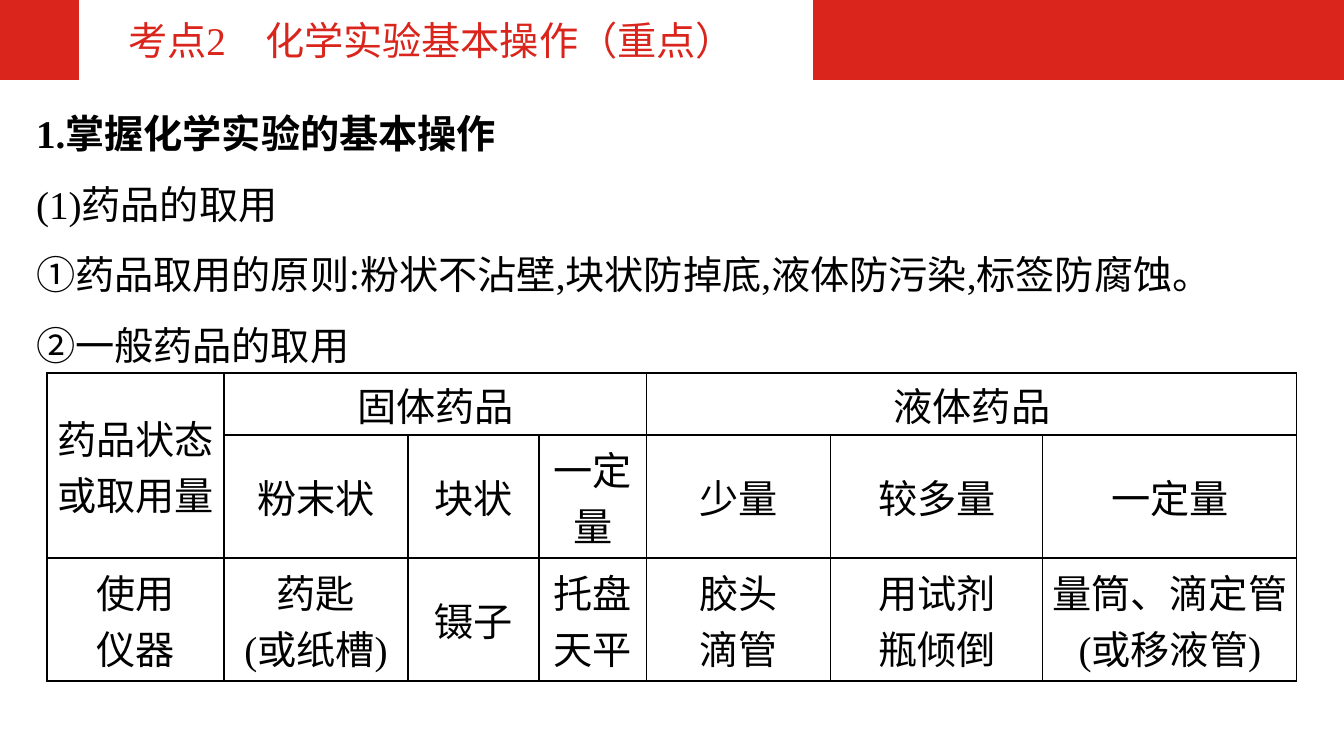
import dataclasses

import lxml.etree
import pptx
import pptx.dml.color
import pptx.enum.shapes
import pptx.enum.text
import pptx.oxml.ns
import pptx.util

EMU_PER_PX = 914400 / 100.8
SLIDE_WIDTH, SLIDE_HEIGHT = 1344, 756


@dataclasses.dataclass(frozen=True)
class Theme:
    """Colours and type shared by the whole slide."""

    red: str = "DA251C"
    white: str = "FFFFFF"
    black: str = "000000"
    font: str = "Times New Roman"
    size: int = 28
    border: int = 1
    line_spacing: float = 1.5


THEME = Theme()

TITLE = "考点2　化学实验基本操作（重点）"
BODY_LINES = [
    "1.掌握化学实验的基本操作",
    "(1)药品的取用",
    "①药品取用的原则:粉状不沾壁,块状防掉底,液体防污染,标签防腐蚀。",
    "②一般药品的取用",
]
COLUMN_WIDTHS = [177, 184, 131, 108, 184, 212, 254]
ROW_HEIGHTS = [62, 123, 123]
TABLE_ROWS = [
    ["药品状态\n或取用量", "固体药品", "", "", "液体药品", "", ""],
    ["", "粉末状", "块状", "一定量", "少量", "较多量", "一定量"],
    ["使用\n仪器", "药匙\n(或纸槽)", "镊子", "托盘\n天平", "胶头\n滴管",
     "用试剂\n瓶倾倒", "量筒、滴定管\n(或移液管)"],
]
MERGES = [((0, 0), (1, 0)), ((0, 1), (0, 3)), ((0, 4), (0, 6))]


def px(length):
    """Turn pixels into EMU."""
    return pptx.util.Emu(round(length * EMU_PER_PX))


def colour(value):
    """Turn a hex string into a colour."""
    return pptx.dml.color.RGBColor.from_string(value)


def place(shape, box):
    """Move a shape to a box of left, top, width and height."""
    shape.left, shape.top, shape.width, shape.height = map(px, box)


def paint(target, value):
    """Give a shape or cell a solid fill."""
    target.fill.solid()
    target.fill.fore_color.rgb = colour(value)


def write(text_frame, lines, alignment, text_colour, spacing=None, bold_lines=0):
    """Write one paragraph per line, the first ones bold."""
    for index, line in enumerate(lines):
        paragraph = text_frame.paragraphs[0] if index == 0 else text_frame.add_paragraph()
        paragraph.alignment = alignment
        paragraph.line_spacing = spacing
        paragraph.space_before = pptx.util.Pt(0)
        run = paragraph.add_run()
        run.text = line
        run.font.name = THEME.font
        run.font.size = pptx.util.Pt(THEME.size)
        run.font.bold = index < bold_lines
        run.font.color.rgb = colour(text_colour)


def add_block(slide, box, value):
    """Add a plain filled rectangle."""
    block = slide.shapes.add_shape(pptx.enum.shapes.MSO_SHAPE.RECTANGLE, *map(px, box))
    block.shadow.inherit = False
    paint(block, value)
    block.line.fill.background()


def build_header(slide, box):
    """Build the red band with its white gap and title panel."""
    left, top, width, height = box
    add_block(slide, box, THEME.red)
    add_block(slide, (left + 79, top, 39, height), THEME.white)
    title = slide.shapes.title
    place(title, (left + 118, top, 695, height))
    paint(title, THEME.white)
    title.text_frame.auto_size = pptx.enum.text.MSO_AUTO_SIZE.NONE
    title.text_frame.vertical_anchor = pptx.enum.text.MSO_ANCHOR.MIDDLE
    write(title.text_frame, [TITLE], pptx.enum.text.PP_ALIGN.LEFT, THEME.red)
    title.element.getparent().append(title.element)


def build_body(slide, box):
    """Build the list of points without bullets."""
    body = slide.placeholders[1]
    place(body, box)
    body.text_frame.auto_size = pptx.enum.text.MSO_AUTO_SIZE.NONE
    write(body.text_frame, BODY_LINES, pptx.enum.text.PP_ALIGN.LEFT, THEME.black,
          THEME.line_spacing, bold_lines=1)
    for paragraph in body.text_frame.paragraphs:
        properties = paragraph._p.get_or_add_pPr()
        properties.set("marL", "0")
        properties.set("indent", "0")
        lxml.etree.SubElement(properties, pptx.oxml.ns.qn("a:buNone"))


def add_borders(cell):
    """Draw all four borders of a cell."""
    properties = cell._tc.get_or_add_tcPr()
    for side in ("lnL", "lnR", "lnT", "lnB"):
        line = lxml.etree.SubElement(properties, pptx.oxml.ns.qn(f"a:{side}"),
                                     w=str(pptx.util.Pt(THEME.border)))
        fill = lxml.etree.SubElement(line, pptx.oxml.ns.qn("a:solidFill"))
        lxml.etree.SubElement(fill, pptx.oxml.ns.qn("a:srgbClr"), val=THEME.black)


def format_cell(cell, text):
    """Border, fill and write one cell."""
    add_borders(cell)
    paint(cell, THEME.white)
    cell.margin_left = cell.margin_right = cell.margin_top = cell.margin_bottom = 0
    cell.vertical_anchor = pptx.enum.text.MSO_ANCHOR.MIDDLE
    if text:
        write(cell.text_frame, text.split("\n"), pptx.enum.text.PP_ALIGN.CENTER, THEME.black)


def build_table(slide, box):
    """Build the table of instruments for each kind of reagent."""
    frame = slide.shapes.add_table(len(ROW_HEIGHTS), len(COLUMN_WIDTHS), *map(px, box))
    table = frame.table
    table.first_row = table.horz_banding = False
    for column, width in zip(table.columns, COLUMN_WIDTHS):
        column.width = px(width)
    for row, height in zip(table.rows, ROW_HEIGHTS):
        row.height = px(height)
    for first, last in MERGES:
        table.cell(*first).merge(table.cell(*last))
    for row, texts in zip(table.rows, TABLE_ROWS):
        for cell, text in zip(row.cells, texts):
            format_cell(cell, text)


def main():
    """Build and save the slide."""
    presentation = pptx.Presentation()
    presentation.slide_width, presentation.slide_height = px(SLIDE_WIDTH), px(SLIDE_HEIGHT)
    slide = presentation.slides.add_slide(presentation.slide_layouts[1])
    build_body(slide, (26, 81, 1292, 295))
    build_header(slide, (0, 0, SLIDE_WIDTH, 80))
    build_table(slide, (47, 373, sum(COLUMN_WIDTHS), sum(ROW_HEIGHTS)))
    presentation.save("out.pptx")


if __name__ == "__main__":
    main()
